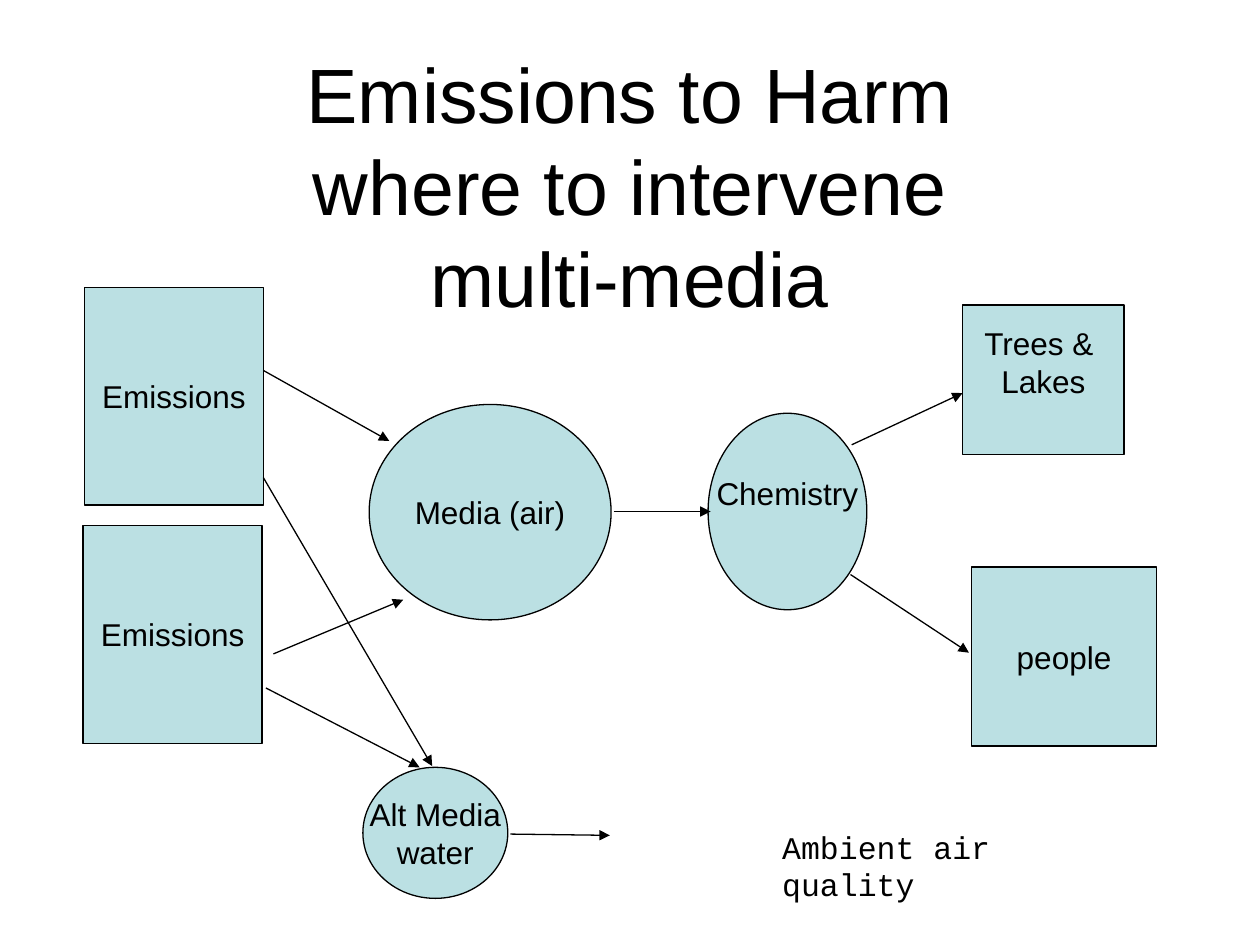
from pptx import Presentation
from pptx.dml.color import RGBColor
from pptx.enum.shapes import MSO_CONNECTOR, MSO_SHAPE
from pptx.enum.text import MSO_ANCHOR, MSO_AUTO_SIZE, PP_ALIGN
from pptx.oxml.ns import qn
from pptx.util import Pt
from lxml.etree import SubElement

PX = 9144


def px(*values):
    return [v * PX for v in values]


def color(value):
    return RGBColor.from_string(value)


class Diagram:
    """Draws styled elements on the current slide."""

    ink, fill, font, size, stroke = "000000", "BBE0E3", "Arial", 18, 0.75

    def __init__(self, prs):
        self.s = prs.slides.add_slide(prs.slide_layouts[5])

    def set_text(self, tf, text, size=None, font=None, align=PP_ALIGN.CENTER):
        tf.text = text
        for p in tf.paragraphs:
            p.alignment = align
            p.font.size = Pt(size or self.size)
            p.font.name = font or self.font
            p.font.color.rgb = color(self.ink)

    def title(self, text, *box):
        sp = self.s.shapes.title
        sp.left, sp.top, sp.width, sp.height = px(*box)
        tf = sp.text_frame
        tf.auto_size = MSO_AUTO_SIZE.NONE
        tf.vertical_anchor = MSO_ANCHOR.MIDDLE
        self.set_text(tf, text, size=44)

    def node(self, kind, text, *box, bottom=5):
        sp = self.s.shapes.add_shape(kind, *px(*box))
        sp.shadow.inherit = False
        sp.fill.solid()
        sp.fill.fore_color.rgb = color(self.fill)
        sp.line.color.rgb = color(self.ink)
        sp.line.width = Pt(self.stroke)
        tf = sp.text_frame
        tf.word_wrap = False
        tf.vertical_anchor = MSO_ANCHOR.MIDDLE
        tf.margin_bottom = bottom * PX
        self.set_text(tf, text)

    def arrow(self, *ends):
        cn = self.s.shapes.add_connector(MSO_CONNECTOR.STRAIGHT, *px(*ends))
        cn.line.color.rgb = color(self.ink)
        cn.line.width = Pt(self.stroke)
        sp_pr = cn.element.spPr
        SubElement(sp_pr.find(qn("a:ln")), qn("a:tailEnd"), type="triangle")
        SubElement(sp_pr, qn("a:effectLst"))

    def label(self, text, *box):
        tf = self.s.shapes.add_textbox(*px(*box)).text_frame
        tf.word_wrap = True
        self.set_text(tf, text, font="Courier New", align=PP_ALIGN.LEFT)


def main():
    prs = Presentation()
    prs.slide_width, prs.slide_height = px(1000, 750)
    d = Diagram(prs)
    d.title("Emissions to Harm\vwhere to intervene\vmulti-media", 50, 84, 900, 125)

    rect, oval = MSO_SHAPE.RECTANGLE, MSO_SHAPE.OVAL
    d.node(rect, "Emissions", 67, 228, 142, 173)
    d.node(rect, "Emissions", 66, 417, 142, 173)
    d.node(oval, "Media (air)", 293, 321, 192, 171)
    d.node(oval, "Chemistry", 562, 328, 126, 156, bottom=34)
    d.node(rect, "Trees & \nLakes", 764, 242, 128, 119, bottom=34)
    d.node(rect, "people", 771, 450, 147, 142)
    d.node(oval, "Alt Media\nwater", 288, 609, 115, 104)

    for ends in (
        (209, 294, 309, 350),
        (217, 519, 320, 476),
        (487, 406, 564, 406),
        (676, 353, 764, 312),
        (675, 456, 769, 518),
        (209, 379, 343, 608),
        (211, 546, 333, 609),
        (405, 662, 484, 663),
    ):
        d.arrow(*ends)

    d.label("Ambient air quality", 611, 652, 256, 40)
    prs.save("out.pptx")


if __name__ == "__main__":
    main()
